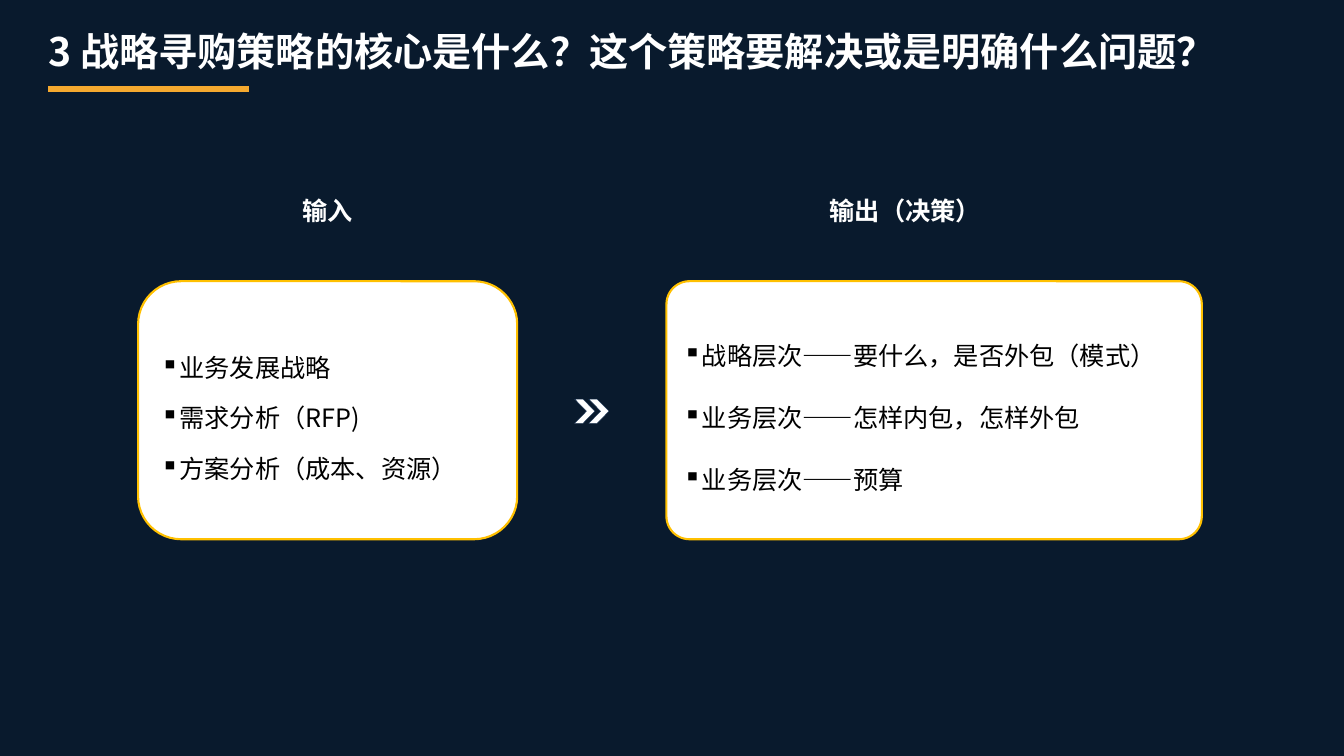
from dataclasses import dataclass

import lxml.etree
import pptx
import pptx.dml.color
import pptx.enum.shapes
import pptx.enum.text
import pptx.oxml.ns
import pptx.util

Inches = pptx.util.Inches
Pt = pptx.util.Pt
qn = pptx.oxml.ns.qn
SHAPES = pptx.enum.shapes.MSO_SHAPE
ALIGN = pptx.enum.text.PP_ALIGN
ANCHOR = pptx.enum.text.MSO_ANCHOR

FONT = "Noto Sans CJK SC"
COLORS = {
    "night": "091A2D",
    "accent": "F5A92F",
    "gold": "FFC000",
    "navy": "0D294B",
    "white": "FFFFFF",
    "black": "000000",
}


@dataclass
class Panel:
    heading: str
    heading_left: float
    heading_width: float
    left: float
    width: float
    corner: float
    gap: float
    items: list[str]


PANELS = [
    Panel("输入", 2.9, 0.7, 1.37, 3.76, 0.167, 3.6,
          ["业务发展战略", "需求分析（RFP)", "方案分析（成本、资源）"]),
    Panel("输出（决策）", 8.13, 1.7, 6.61, 5.31, 0.089, 12,
          ["战略层次——要什么，是否外包（模式）",
           "业务层次——怎样内包，怎样外包",
           "业务层次——预算"]),
]
PANEL_TOP, PANEL_HEIGHT = 2.79, 2.56
CHEVRON_LEFTS = (5.7, 5.84)


def color(name: str) -> pptx.dml.color.RGBColor:
    return pptx.dml.color.RGBColor.from_string(COLORS[name])


def set_font(para, size: float, color_name: str, bold: bool = False) -> None:
    """Set one font for Latin and East Asian text of a paragraph."""
    font = para.font
    font.size = Pt(size)
    font.bold = bold
    font.color.rgb = color(color_name)
    font.name = FONT
    defaults = para._p.pPr.find(qn("a:defRPr"))
    lxml.etree.SubElement(defaults, qn("a:ea"), typeface=FONT)


def add_bullet(para) -> None:
    properties = para._p.get_or_add_pPr()
    properties.set("marL", "0")
    properties.set("indent", "0")
    lxml.etree.SubElement(properties, qn("a:buChar"), char="▪")


def add_shape(shapes, kind, left: float, top: float, width: float, height: float,
              fill: str, line: str | None = None, weight: float = 0,
              corner: float | None = None):
    shape = shapes.add_shape(kind, Inches(left), Inches(top), Inches(width), Inches(height))
    shape.shadow.inherit = False
    shape.fill.solid()
    shape.fill.fore_color.rgb = color(fill)
    if line:
        shape.line.color.rgb = color(line)
        shape.line.width = Pt(weight)
    else:
        shape.line.fill.background()
    if corner is not None:
        shape.adjustments[0] = corner
    return shape


def add_label(page, text: str, left: float, top: float, width: float, height: float,
              size: float, align, wrap: bool):
    box = page.shapes.add_textbox(Inches(left), Inches(top), Inches(width), Inches(height))
    box.text_frame.word_wrap = wrap
    para = box.text_frame.paragraphs[0]
    para.text = text
    para.alignment = align
    set_font(para, size, "white", bold=True)
    return para


def add_title(page) -> None:
    rule = page.shapes.add_connector(pptx.enum.shapes.MSO_CONNECTOR.STRAIGHT,
                                     Inches(0.48), Inches(0.88), Inches(2.47), Inches(0.88))
    rule.line.color.rgb = color("accent")
    rule.line.width = Pt(4.5)
    lxml.etree.SubElement(rule._element.spPr, qn("a:effectLst"))
    title = add_label(page, "3 战略寻购策略的核心是什么？这个策略要解决或是明确什么问题？",
                      0.38, 0.27, 11.81, 0.6, 28, ALIGN.LEFT, True)
    title.line_spacing = 0.9


def add_panel(page, panel: Panel) -> None:
    add_label(page, panel.heading, panel.heading_left, 1.89, panel.heading_width, 0.4,
              18, ALIGN.CENTER, False)
    box = add_shape(page.shapes, SHAPES.ROUNDED_RECTANGLE, panel.left, PANEL_TOP,
                    panel.width, PANEL_HEIGHT, "white", "gold", 1.5, panel.corner)
    frame = box.text_frame
    frame.word_wrap = True
    frame.vertical_anchor = ANCHOR.MIDDLE
    for index, item in enumerate(panel.items):
        para = frame.add_paragraph() if index else frame.paragraphs[0]
        para.text = item
        para.alignment = ALIGN.LEFT
        para.line_spacing = 1.5
        if index:
            para.space_before = Pt(panel.gap)
        add_bullet(para)
        set_font(para, 18, "black")


def main() -> None:
    deck = pptx.Presentation()
    deck.slide_width, deck.slide_height = Inches(13.33), Inches(7.5)
    page = deck.slides.add_slide(deck.slide_layouts[6])
    add_shape(page.shapes, SHAPES.RECTANGLE, 0, 0, 13.33, 7.5, "night")
    add_title(page)
    for panel in PANELS:
        add_panel(page, panel)
    arrows = page.shapes.add_group_shape()
    for left in CHEVRON_LEFTS:
        add_shape(arrows.shapes, SHAPES.CHEVRON, left, 3.96, 0.2, 0.24,
                  "white", "navy", 0.25, 0.588)
    deck.save("out.pptx")


if __name__ == "__main__":
    main()
